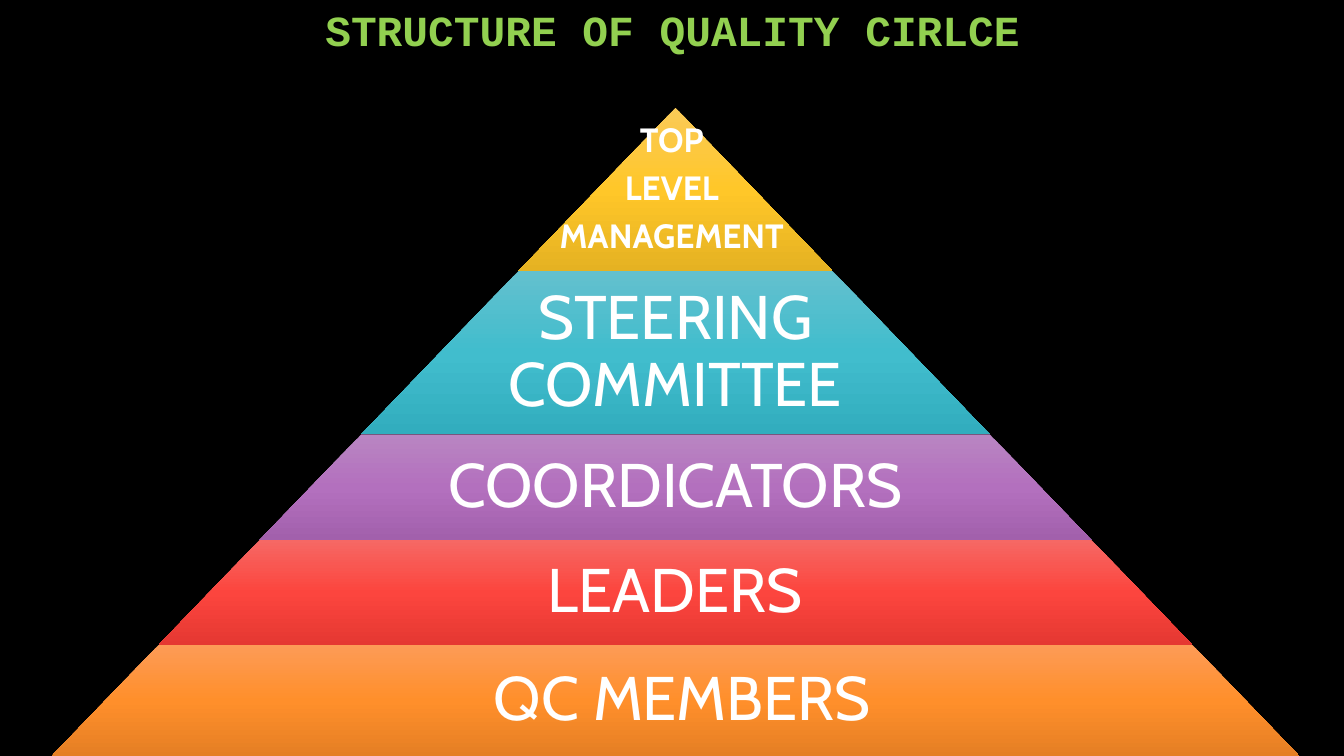
"""Build a slide with the five-level pyramid of a quality circle."""
import copy

import pptx
import pptx.dml.color
import pptx.enum.shapes
import pptx.enum.text
import pptx.oxml.ns
import pptx.util

Inches = pptx.util.Inches
Pt = pptx.util.Pt
ANCHOR = pptx.enum.text.MSO_ANCHOR


def color(value):
    return pptx.dml.color.RGBColor.from_string(value)


def assign(target, values):
    for name, value in values.items():
        setattr(target, name, value)


class PyramidSlide:
    slope = 0.962
    center = 6.7
    line_spacing = 0.9
    space_after = 0.35

    def __init__(self, presentation, background):
        self.slide = presentation.slides.add_slide(presentation.slide_layouts[6])
        fill = self.slide.background.fill
        fill.solid()
        fill.fore_color.rgb = color(background)

    def text(self, box, lines, font, fill, anchor, inset, space_after=0):
        shape = self.slide.shapes.add_textbox(*map(Inches, box))
        frame = shape.text_frame
        assign(frame, {"word_wrap": True, "vertical_anchor": anchor})
        for side in ("left", "top", "right", "bottom"):
            setattr(frame, f"margin_{side}", Inches(inset))
        frame.text = "\n".join(lines)
        for paragraph in frame.paragraphs:
            assign(paragraph, {
                "alignment": pptx.enum.text.PP_ALIGN.CENTER,
                "line_spacing": self.line_spacing,
                "space_after": Pt(space_after),
            })
            run_font = paragraph.runs[0].font
            assign(run_font, font)
            run_font.color.rgb = color(fill)

    def band(self, box, colors):
        shape = self.slide.shapes.add_shape(
            pptx.enum.shapes.MSO_SHAPE.TRAPEZOID, *map(Inches, box))
        shape.adjustments[0] = self.slope
        shape.shadow.inherit = False
        shape.line.fill.background()
        shape.fill.gradient()
        shape.fill.gradient_angle = 270
        first = shape.element.spPr.find(".//" + pptx.oxml.ns.qn("a:gs"))
        first.addnext(copy.deepcopy(first))
        for stop, position, value in zip(shape.fill.gradient_stops, (0, 0.5, 1), colors):
            stop.position = position
            stop.color.rgb = color(value)

    def level(self, apex, top, bottom, lines, colors, size, bold, share, inset):
        width = 2 * self.slope * (bottom - apex)
        height = bottom - top
        self.band((self.center - width / 2, top, width, height), colors)
        text_width = width * share
        self.text((self.center - text_width / 2, top, text_width, height), lines,
                  {"name": "Cabin", "size": Pt(size), "bold": bold}, "FFFFFF",
                  ANCHOR.MIDDLE, inset, size * self.space_after)


def main():
    presentation = pptx.Presentation()
    assign(presentation, {"slide_width": Inches(13.33), "slide_height": Inches(7.5)})
    pyramid = PyramidSlide(presentation, "000000")
    pyramid.text((1.67, 0, 10, 0.6), ["STRUCTURE OF QUALITY CIRLCE"],
                 {"name": "Courier New", "size": Pt(30.6), "bold": True},
                 "92D050", ANCHOR.BOTTOM, 0.05)

    edges = [1.07, 2.69, 4.31, 5.36, 6.4, 7.5]
    peak_style = (24, True, 1, 0.03)
    lower_style = (44, False, 0.65, 0.06)
    levels = [
        (["TOP ", "LEVEL ", "MANAGEMENT "], ("FACA57", "FFC729", "E5B222"), peak_style),
        (["STEERING COMMITTEE"], ("63C0CE", "41BDCD", "32ADBE"), lower_style),
        (["COORDICATORS"], ("B985C2", "B370BE", "A260AC"), lower_style),
        (["LEADERS"], ("F66864", "FC453E", "E53832"), lower_style),
        ([" QC MEMBERS"], ("FD9B56", "FF8F2B", "E57F24"), lower_style),
    ]
    for top, bottom, (lines, colors, style) in zip(edges, edges[1:], levels):
        pyramid.level(edges[0], top, bottom, lines, colors, *style)
    presentation.save("out.pptx")


if __name__ == "__main__":
    main()
